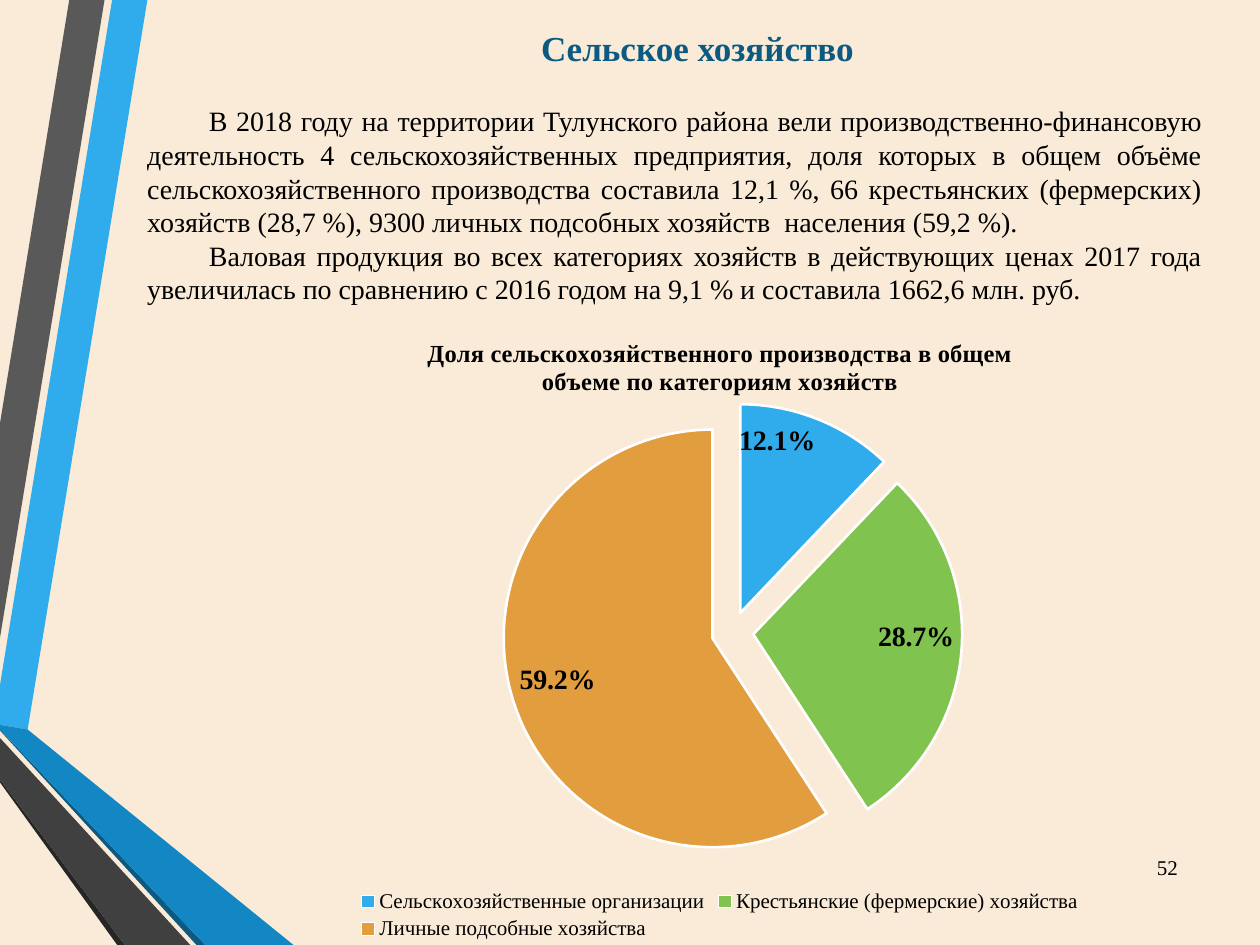
from lxml.etree import fromstring
from pptx import Presentation
from pptx.chart.data import CategoryChartData as Data
from pptx.dml.color import RGBColor
from pptx.enum.chart import XL_CHART_TYPE as Kind, XL_LABEL_POSITION as Spot, XL_LEGEND_POSITION as Side
from pptx.enum.text import MSO_ANCHOR as Anchor, PP_ALIGN as Align
from pptx.util import Inches, Pt

FONT = "Times New Roman"
CREAM = RGBColor(0xF9, 0xEB, 0xD8)
SKY = RGBColor(0x30, 0xAC, 0xEC)
BLUE = RGBColor(0x12, 0x87, 0xC3)
NAVY = RGBColor(0x0C, 0x5A, 0x82)
GREY = RGBColor(0x59, 0x59, 0x59)
DARK = RGBColor(0x40, 0x40, 0x40)
COAL = RGBColor(0x26, 0x26, 0x26)
GREEN = RGBColor(0x80, 0xC3, 0x4F)
AMBER = RGBColor(0xE2, 0x9D, 0x3E)
BLACK = RGBColor(0, 0, 0)
WHITE = RGBColor(0xFF, 0xFF, 0xFF)
NS = "http://schemas.openxmlformats.org/drawingml/2006/chart"

deck = Presentation()
deck.slide_width, deck.slide_height = Inches(10), Inches(7.5)
COL, ROW = deck.slide_width / 1000, deck.slide_height / 1000
slide = deck.slides.add_slide(deck.slide_layouts[6])
slide.background.fill.solid()
slide.background.fill.fore_color.rgb = CREAM


def place(x, y, w, h):
    return [round(n) for n in (x * COL, y * ROW, w * COL, h * ROW)]


def write(frame, *lines, size=12, color=BLACK, bold=False, align=Align.CENTER, indent=0):
    frame.word_wrap = True
    frame.vertical_anchor = Anchor.MIDDLE
    for i, line in enumerate(lines):
        para = frame.paragraphs[0] if i == 0 else frame.add_paragraph()
        para.alignment = align
        if indent:
            para._p.get_or_add_pPr().set("indent", str(Inches(indent)))
        run = para.add_run()
        run.text = line
        font = run.font
        font.name, font.size, font.bold, font.color.rgb = FONT, Pt(size), bold, color


bands = [
    (SKY, [(0, 725), (0, 767), (22, 772), (117, 0), (89, 0)]),
    (GREY, [(83, 0), (55, 0), (0, 448), (0, 675)]),
    (COAL, [(0, 825), (0, 828), (93, 1000), (99, 1000)]),
    (NAVY, [(0, 772), (0, 773), (156, 1000), (163, 1000)]),
    (BLUE, [(0, 772), (163, 1000), (233, 1000), (22, 772), (0, 767)]),
    (DARK, [(0, 825), (99, 1000), (151, 1000), (0, 781)]),
]
for color, dots in bands:
    pen = slide.shapes.build_freeform(*dots[0], scale=(COL, ROW))
    pen.add_line_segments(dots[1:], close=True)
    band = pen.convert_to_shape()
    band.shadow.inherit = False
    band.fill.solid()
    band.fill.fore_color.rgb = color
    band.line.fill.background()

head = slide.shapes.add_textbox(*place(107, 0, 893, 101))
write(head.text_frame, "Сельское хозяйство", size=20, color=NAVY, bold=True)

body = slide.shapes.add_textbox(*place(107, 101, 857, 231))
write(
    body.text_frame,
    "В 2018 году на территории Тулунского района вели производственно-финансовую "
    "деятельность 4 сельскохозяйственных предприятия, доля которых в общем объёме "
    "сельскохозяйственного производства составила 12,1 %, 66 крестьянских (фермерских) "
    "хозяйств (28,7 %), 9300 личных подсобных хозяйств  населения (59,2 %).",
    "Валовая продукция во всех категориях хозяйств в действующих ценах 2017 года "
    "увеличилась по сравнению с 2016 годом на 9,1 % и составила 1662,6 млн. руб.",
    size=16, align=Align.JUSTIFY, indent=0.49,
)

page = slide.shapes.add_textbox(*place(903, 891, 47, 53))
write(page.text_frame, "52")

data = Data(number_format="0.0%")
data.categories = [
    "Сельскохозяйственные организации",
    "Крестьянские (фермерские) хозяйства",
    "Личные подсобные хозяйства",
]
data.add_series("Series 1", [0.121, 0.287, 0.592])
chart = slide.shapes.add_chart(Kind.PIE, *place(240, 332, 663, 668), data).chart
chart.font.name, chart.font.size, chart.font.color.rgb = FONT, Pt(10), BLACK
chart.has_title = True
write(
    chart.chart_title.text_frame,
    "Доля сельскохозяйственного производства в общем объеме по категориям хозяйств",
    size=14, bold=True,
)
chart.chart_title.include_in_layout = False

chart.has_legend = True
key = chart.legend
key.position = Side.BOTTOM
key.include_in_layout = False
key.font.name, key.font.size, key.font.color.rgb = FONT, Pt(12), BLACK

pie = chart.plots[0]
pie.vary_by_categories = True
ring = pie.series[0]
for i, color in enumerate([SKY, GREEN, AMBER]):
    look = ring.points[i].format
    look.fill.solid()
    look.fill.fore_color.rgb = color
    look.line.color.rgb = WHITE
    look.line.width = Pt(1.5)
first = ring._element.find(f"{{{NS}}}dPt")
first.addprevious(fromstring(f'<c:explosion xmlns:c="{NS}" val="10"/>'))

pie.has_data_labels = True
tags = pie.data_labels
tags.show_value, tags.show_percentage = True, False
tags.number_format, tags.number_format_is_linked = "0.0%", False
tags.position = Spot.INSIDE_END
tags.font.name, tags.font.size, tags.font.bold, tags.font.color.rgb = FONT, Pt(16), True, BLACK

area = chart._chartSpace.chart.plotArea
for old in area.findall(f"{{{NS}}}layout"):
    area.remove(old)
spots = "".join(f'<c:{k}Mode val="edge"/>' for k in "xy")
sizes = "".join(f'<c:{k} val="{v}"/>' for k, v in zip("xywh", (0.24, 0.12, 0.55, 0.77)))
area.insert(0, fromstring(
    f'<c:layout xmlns:c="{NS}"><c:manualLayout><c:layoutTarget val="inner"/>'
    f"{spots}{sizes}</c:manualLayout></c:layout>"
))

deck.save("out.pptx")
